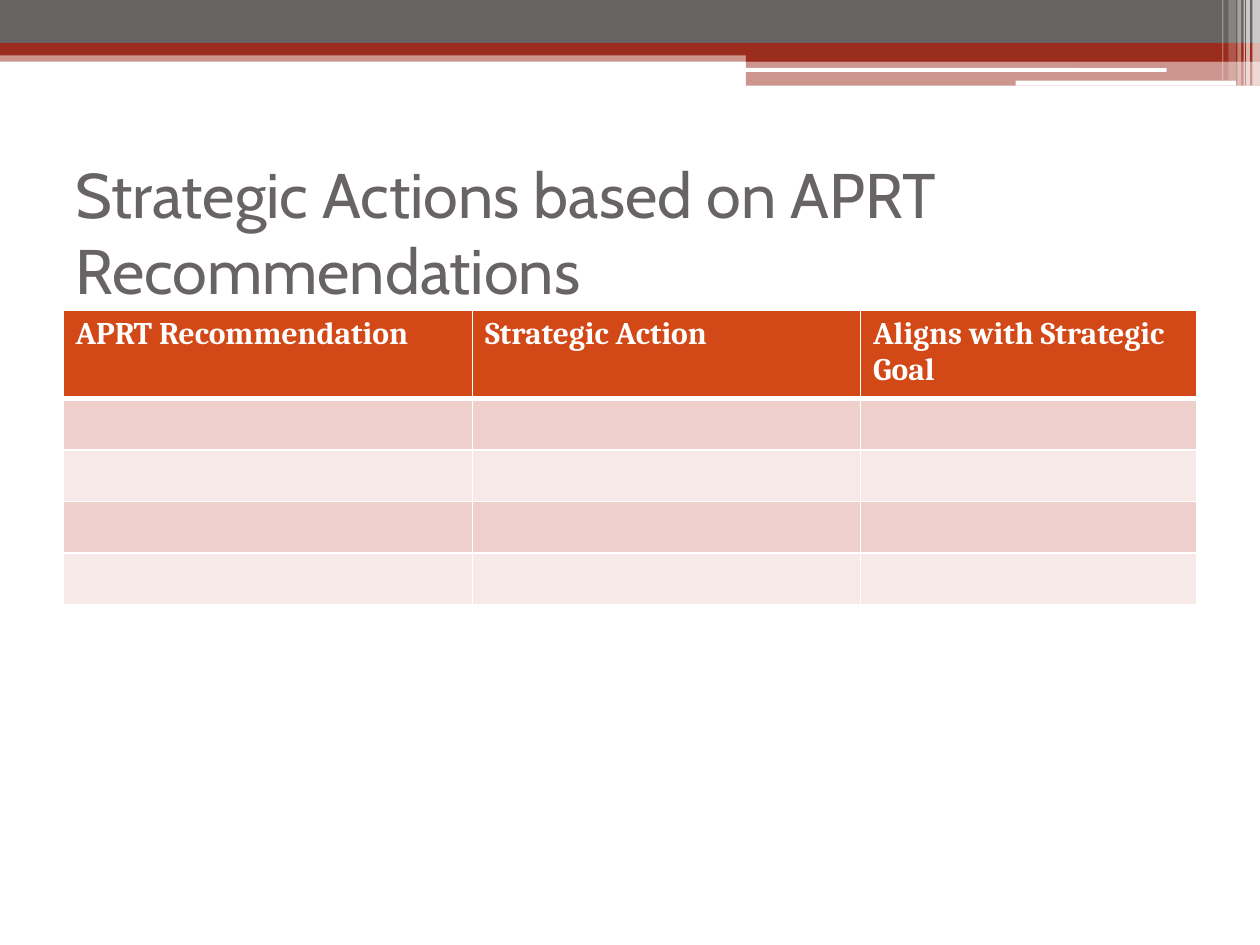
from dataclasses import dataclass

import lxml.etree
import pptx
import pptx.dml.color
import pptx.enum.shapes
import pptx.enum.text
import pptx.oxml.ns
import pptx.util
from pptx.util import Inches


@dataclass(frozen=True)
class Theme:
    white: str = "FFFFFF"
    gray: str = "696464"
    red: str = "9B2D1F"
    header: str = "D34817"
    bands: tuple = ("EFCFCC", "F7E9E8")
    title_font: str = "Cabin"
    body_font: str = "Cambria"
    title_size: int = 36
    body_size: int = 18


THEME = Theme()
RECTANGLE = pptx.enum.shapes.MSO_SHAPE.RECTANGLE
ROUNDED = pptx.enum.shapes.MSO_SHAPE.ROUNDED_RECTANGLE

BANDS = [
    (0, 0.4, 10, 0.09, THEME.red, 50, RECTANGLE),
    (0, 0, 10, 0.34, THEME.gray, 100, RECTANGLE),
    (0, 0.34, 10, 0.1, THEME.red, 100, RECTANGLE),
    (5.92, 0.39, 4.08, 0.1, THEME.red, 100, RECTANGLE),
    (5.92, 0.48, 4.08, 0.2, THEME.red, 50, RECTANGLE),
    (5.91, 0.54, 3.35, 0.03, THEME.white, 100, ROUNDED),
    (8.06, 0.64, 1.75, 0.04, THEME.white, 100, ROUNDED),
]
STRIPES = [
    (9.94, 0.06, 0.68, 65),
    (9.89, 0.03, 0.68, 65),
    (9.87, 0.01, 0.68, 60),
    (9.82, 0.03, 0.68, 40),
    (9.75, 0.06, 0.64, 20),
    (9.7, 0.01, 0.64, 30),
]
HEADINGS = ["APRT Recommendation", "Strategic Action", "Aligns with Strategic Goal"]
COLUMN_WIDTHS = [3.25, 3.08, 2.67]
ROW_HEIGHTS = [0.68] + [0.41] * 4


def rgb(color):
    return pptx.dml.color.RGBColor.from_string(color)


def add_bar(slide, left, top, width, height, color, opacity=100, kind=RECTANGLE):
    shape = slide.shapes.add_shape(
        kind, Inches(left), Inches(top), Inches(width), Inches(height))
    shape.shadow.inherit = False
    shape.line.fill.background()
    shape.fill.solid()
    shape.fill.fore_color.rgb = rgb(color)
    if opacity < 100:
        color_element = shape.fill._xPr.find(".//" + pptx.oxml.ns.qn("a:srgbClr"))
        lxml.etree.SubElement(
            color_element, pptx.oxml.ns.qn("a:alpha"), val=str(opacity * 1000))


def write_text(frame, text, *, font, size, color, bold=False):
    paragraph = frame.paragraphs[0]
    if text:
        run = paragraph.add_run()
        run.text = text
        style = run.font
    else:
        style = paragraph.font
    style.name = font
    style.size = pptx.util.Pt(size)
    style.bold = bold
    style.color.rgb = rgb(color)


def add_title(slide, text):
    box = slide.shapes.add_textbox(Inches(0.5), Inches(1.25), Inches(9), Inches(1.17))
    frame = box.text_frame
    frame.word_wrap = True
    frame.vertical_anchor = pptx.enum.text.MSO_ANCHOR.MIDDLE
    write_text(frame, text, font=THEME.title_font, size=THEME.title_size,
               color=THEME.gray)


def set_borders(cell, bottom, top):
    properties = cell._tc.get_or_add_tcPr()
    widths = {"a:lnL": 1, "a:lnR": 1, "a:lnT": top, "a:lnB": bottom}
    for position, (tag, width) in enumerate(widths.items()):
        line = lxml.etree.Element(
            pptx.oxml.ns.qn(tag), w=str(pptx.util.Pt(width)))
        fill = lxml.etree.SubElement(line, pptx.oxml.ns.qn("a:solidFill"))
        lxml.etree.SubElement(fill, pptx.oxml.ns.qn("a:srgbClr"), val=THEME.white)
        properties.insert(position, line)


def add_actions_table(slide):
    table = slide.shapes.add_table(
        len(ROW_HEIGHTS), len(COLUMN_WIDTHS), Inches(0.5), Inches(2.46),
        Inches(sum(COLUMN_WIDTHS)), Inches(sum(ROW_HEIGHTS))).table
    for column, width in zip(table.columns, COLUMN_WIDTHS):
        column.width = Inches(width)
    for row_number, (row, height) in enumerate(zip(table.rows, ROW_HEIGHTS)):
        row.height = Inches(height)
        is_header = row_number == 0
        fill_color = THEME.header if is_header else THEME.bands[(row_number - 1) % 2]
        for cell, heading in zip(row.cells, HEADINGS):
            cell.fill.solid()
            cell.fill.fore_color.rgb = rgb(fill_color)
            set_borders(cell, bottom=3 if is_header else 1,
                        top=3 if row_number == 1 else 1)
            write_text(cell.text_frame, heading if is_header else "",
                       font=THEME.body_font, size=THEME.body_size,
                       color=THEME.white, bold=is_header)


def main():
    presentation = pptx.Presentation()
    presentation.slide_width = Inches(10)
    presentation.slide_height = Inches(7.5)
    slide = presentation.slides.add_slide(presentation.slide_layouts[6])
    for band in BANDS:
        add_bar(slide, *band)
    for left, width, height, opacity in STRIPES:
        add_bar(slide, left, 0, width, height, THEME.white, opacity)
    add_title(slide, "Strategic Actions based on APRT Recommendations")
    add_actions_table(slide)
    presentation.save("out.pptx")


if __name__ == "__main__":
    main()
